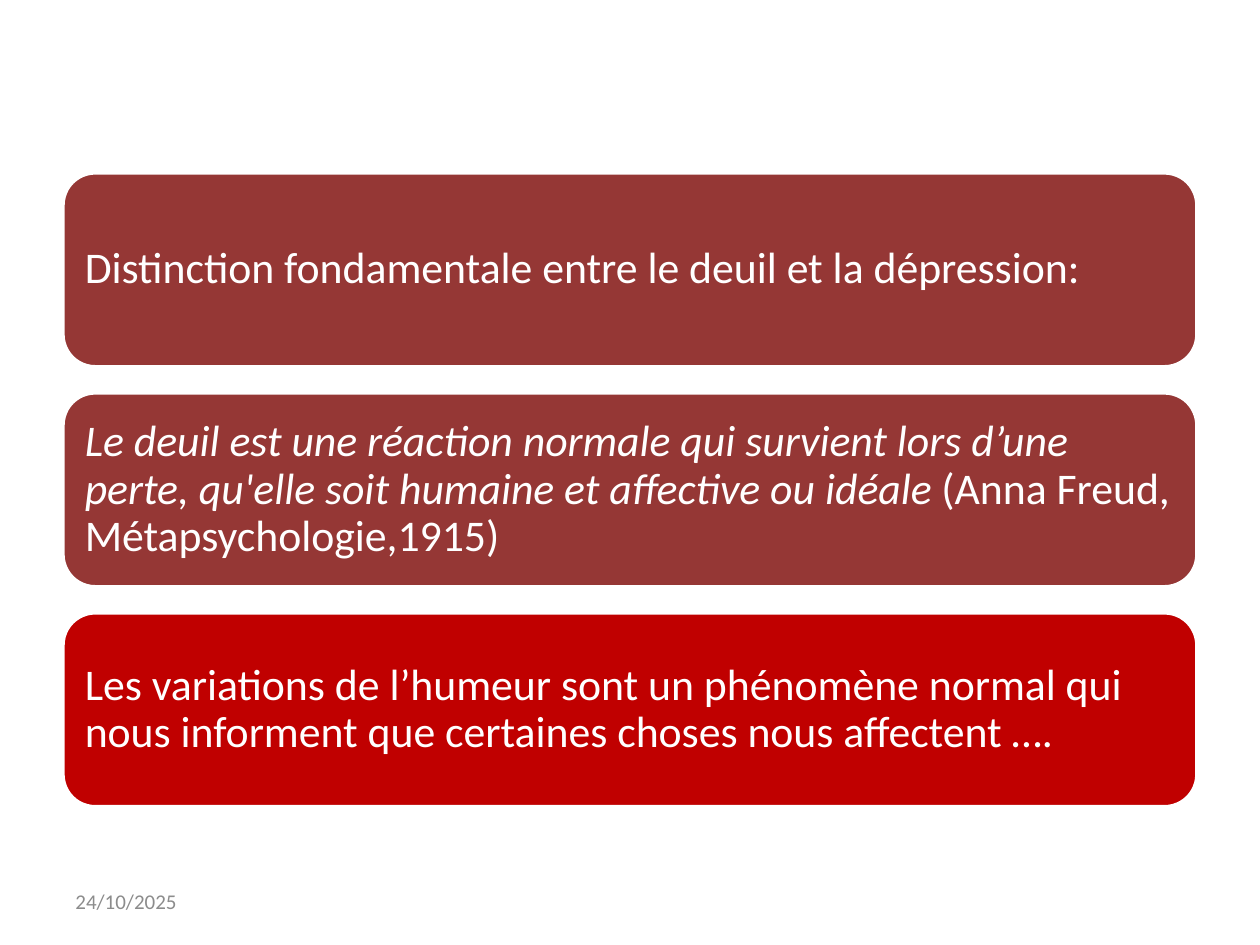
import pptx
import pptx.util
import pptx.dml.color
import pptx.enum.shapes
import pptx.enum.text

Pt = pptx.util.Pt
RGBColor = pptx.dml.color.RGBColor

WHITE = RGBColor(0xFF, 0xFF, 0xFF)
BROWN_RED = RGBColor(0x95, 0x37, 0x35)
BRIGHT_RED = RGBColor(0xC0, 0x00, 0x00)
GREY = RGBColor(0x8C, 0x8C, 0x8C)

CARD_LEFT, CARD_TOP = 36, 98.8
CARD_WIDTH, CARD_HEIGHT = 648, 110.8
CARD_STEP = 125.7

CARDS = [
    (BROWN_RED, [("Distinction fondamentale entre le deuil et la dépression:", False)]),
    (BROWN_RED, [
        ("Le deuil est une réaction normale qui survient lors d’une perte, "
         "qu'elle soit humaine et affective ou idéale ", True),
        ("(Anna Freud, Métapsychologie,1915)", False),
    ]),
    (BRIGHT_RED, [
        ("Les variations de l’humeur sont un phénomène normal qui nous "
         "informent que certaines choses nous affectent ….", False),
    ]),
]


def apply_format(target, values):
    for attribute, value in values.items():
        setattr(target, attribute, value)


def write_text(frame, passages, size, color, inset, line_spacing):
    apply_format(frame, {
        "word_wrap": True,
        "vertical_anchor": pptx.enum.text.MSO_ANCHOR.MIDDLE,
        **inset,
    })
    paragraph = frame.paragraphs[0]
    apply_format(paragraph, {
        "alignment": pptx.enum.text.PP_ALIGN.LEFT,
        "line_spacing": line_spacing,
    })
    for wording, italic in passages:
        run = paragraph.add_run()
        run.text = wording
        apply_format(run.font, {"name": "Calibri", "size": Pt(size), "italic": italic})
        run.font.color.rgb = color


def add_card(slide, top, fill_color, passages):
    card = slide.shapes.add_shape(
        pptx.enum.shapes.MSO_SHAPE.ROUNDED_RECTANGLE,
        Pt(CARD_LEFT), Pt(top), Pt(CARD_WIDTH), Pt(CARD_HEIGHT))
    card.shadow.inherit = False
    card.fill.solid()
    card.fill.fore_color.rgb = fill_color
    card.line.color.rgb = WHITE
    card.line.width = Pt(2)
    sides = ("margin_left", "margin_top", "margin_right", "margin_bottom")
    write_text(card.text_frame, passages, 25, WHITE, dict.fromkeys(sides, Pt(7.2)), 0.9)


def add_date(slide, wording):
    date = slide.shapes.add_textbox(Pt(36), Pt(500.5), Pt(168), Pt(28.75))
    write_text(date.text_frame, [(wording, False)], 12, GREY, {}, 1.0)


def main():
    presentation = pptx.Presentation()
    apply_format(presentation, {"slide_width": Pt(720), "slide_height": Pt(540)})
    slide = presentation.slides.add_slide(presentation.slide_layouts[6])
    add_date(slide, "24/10/2025")
    for index, (fill_color, passages) in enumerate(CARDS):
        add_card(slide, CARD_TOP + index * CARD_STEP, fill_color, passages)
    presentation.save("out.pptx")


if __name__ == "__main__":
    main()
